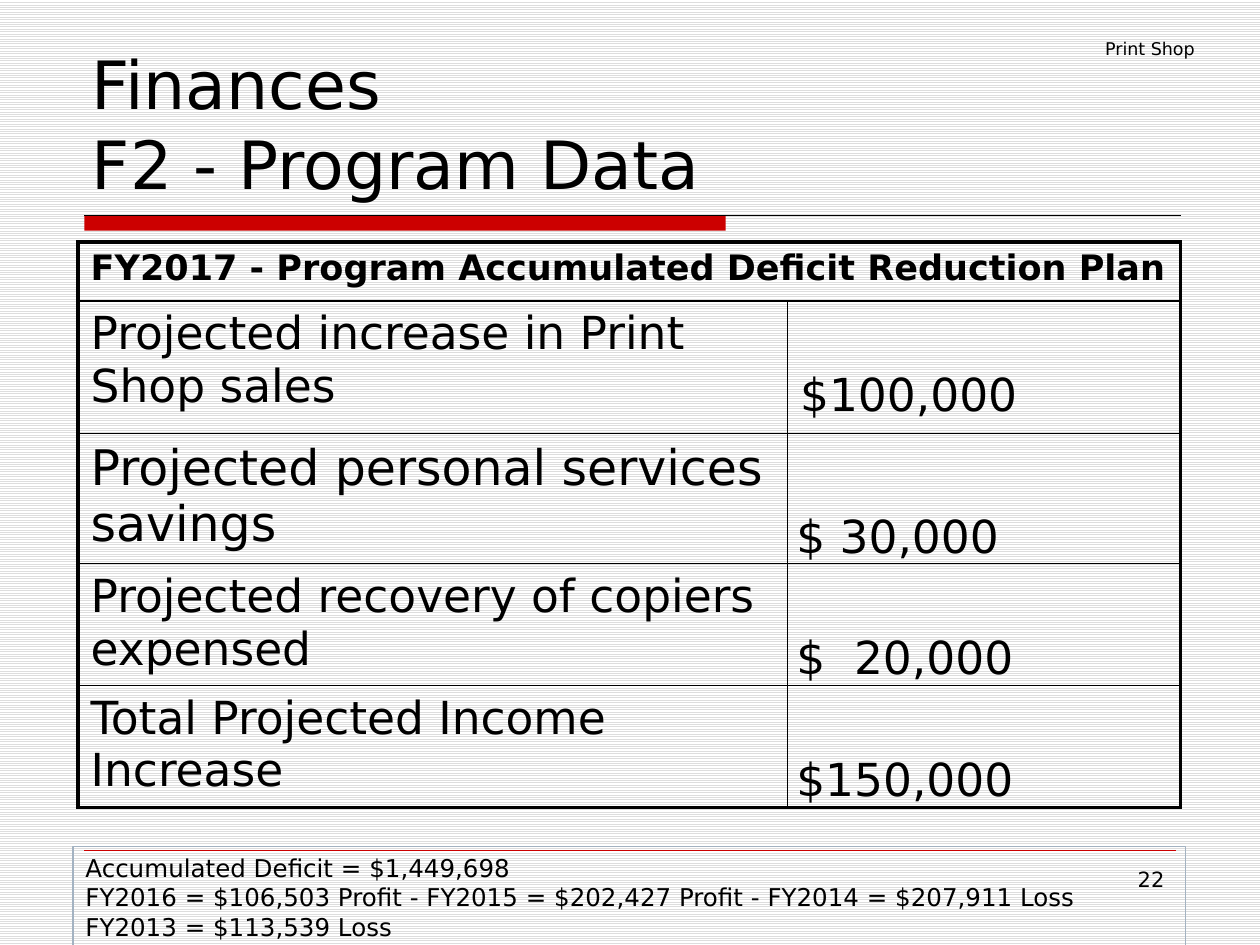
from lxml.etree import SubElement
from pptx import Presentation
from pptx.dml.color import RGBColor
from pptx.enum.dml import MSO_PATTERN
from pptx.enum.shapes import MSO_CONNECTOR, MSO_SHAPE
from pptx.enum.text import MSO_ANCHOR, PP_ALIGN
from pptx.oxml import parse_xml
from pptx.oxml.ns import nsdecls, qn
from pptx.util import Inches, Pt

BLACK = RGBColor(0x00, 0x00, 0x00)
WHITE = RGBColor(0xFF, 0xFF, 0xFF)
RED = RGBColor(0xCC, 0x00, 0x00)
STRIPE = RGBColor(0xDD, 0xDD, 0xDD)
FRAME = RGBColor(0xA3, 0xB2, 0xC1)
FONT = "DejaVu Sans"
THIN, THICK = 1, 2.25


def write(tf, lines, size, align=PP_ALIGN.LEFT, bold=False):
    """Fill a text frame with one paragraph per line."""
    tf.word_wrap = True
    for i, line in enumerate(lines):
        p = tf.add_paragraph() if i else tf.paragraphs[0]
        p.alignment = align
        r = p.add_run()
        r.text = line
        r.font.name, r.font.size, r.font.bold = FONT, Pt(size), bold
        r.font.color.rgb = BLACK


def set_borders(cell, **widths):
    """Draw black borders; widths are points keyed by L, R, T and B."""
    tc_pr = cell._tc.get_or_add_tcPr()
    for i, (side, width) in enumerate(widths.items()):
        tc_pr.insert(i, parse_xml(
            f'<a:ln{side} {nsdecls("a")} w="{Pt(width)}"><a:solidFill>'
            f'<a:srgbClr val="{BLACK}"/></a:solidFill></a:ln{side}>'))


prs = Presentation()
prs.slide_width, prs.slide_height = Inches(10), Inches(7.5)
s = prs.slides.add_slide(prs.slide_layouts[6])
bg = s.background.fill
bg.patterned()
bg.pattern = MSO_PATTERN.LIGHT_HORIZONTAL
bg.fore_color.rgb, bg.back_color.rgb = STRIPE, WHITE

# Title rule and footer rule
bar = s.shapes.add_shape(MSO_SHAPE.RECTANGLE, Inches(0.67), Inches(1.71),
                         Inches(5.09), Inches(0.12))
bar.shadow.inherit = False
bar.fill.solid()
bar.fill.fore_color.rgb = RED
bar.line.fill.background()
for right, y, color, width in ((9.37, 1.71, BLACK, 0.75), (9.33, 6.75, RED, 0.25)):
    rule = s.shapes.add_connector(MSO_CONNECTOR.STRAIGHT, Inches(0.67), Inches(y),
                                  Inches(right), Inches(y))
    rule.line.color.rgb, rule.line.width = color, Pt(width)
    SubElement(rule._element.spPr, qn("a:effectLst"))

# Title, page number and section name
title = s.shapes.add_textbox(Inches(0.63), Inches(0.33), Inches(8.75), Inches(1.33))
title.text_frame.vertical_anchor = MSO_ANCHOR.BOTTOM
write(title.text_frame, ["Finances", "F2 - Program Data"], 38)
for text, size, box in (("22", 12, (7.17, 6.83, 2.17, 0.52)),
                        ("Print Shop", 10, (7.33, 0.25, 2.25, 0.27))):
    label = s.shapes.add_textbox(*map(Inches, box))
    write(label.text_frame, [text], size, PP_ALIGN.RIGHT)

# Deficit reduction table
HEADER = "FY2017 - Program Accumulated Deficit Reduction Plan"
PLAN = [  # item, item size, amount, amount left and bottom margins
    ("Projected increase in Print Shop sales", 26, "$100,000", 0.1, 0.09),
    ("Projected personal services savings", 28, "$ 30,000", 0.07, 0),
    ("Projected recovery of copiers expensed", 26, "$  20,000", 0.07, 0),
    ("Total Projected Income Increase", 26, "$150,000", 0.07, 0),
]
heights = [0.47, 1.05, 1.0, 0.94, 0.94]
frame = s.shapes.add_table(len(heights), 2, Inches(0.62), Inches(1.92),
                           Inches(8.75), Inches(sum(heights)))
table = frame.table
table.first_row = table.horz_banding = False
table.columns[0].width, table.columns[1].width = Inches(5.63), Inches(3.12)
last = len(heights) - 1
for i, height in enumerate(heights):
    table.rows[i].height = Inches(height)
    for j in range(2):
        cell = table.cell(i, j)
        cell.fill.background()
        set_borders(cell, L=THIN if j and i else THICK,
                    R=THICK if j or not i else THIN,
                    T=THIN if i else THICK, B=THICK if i == last else THIN)
table.cell(0, 0).merge(table.cell(0, 1))
write(table.cell(0, 0).text_frame, [HEADER], 20, bold=True)
for i, (item, size, amount, left, bottom) in enumerate(PLAN, 1):
    write(table.cell(i, 0).text_frame, [item], size)
    cell = table.cell(i, 1)
    cell.vertical_anchor = MSO_ANCHOR.BOTTOM
    cell.margin_left, cell.margin_right = Inches(left), Inches(0.07)
    cell.margin_top, cell.margin_bottom = 0, Inches(bottom)
    write(cell.text_frame, [amount], 26)

# Accumulated deficit note
note = s.shapes.add_shape(MSO_SHAPE.RECTANGLE, Inches(0.58), Inches(6.72),
                          Inches(8.83), Inches(0.81))
note.shadow.inherit = False
note.fill.background()
note.line.color.rgb, note.line.width = FRAME, Pt(0.75)
note.text_frame.vertical_anchor = MSO_ANCHOR.TOP
write(note.text_frame, [
    "Accumulated Deficit = $1,449,698",
    "FY2016 = $106,503 Profit - FY2015 = $202,427 Profit - FY2014 = $207,911 Loss",
    "FY2013 = $113,539 Loss",
], 14)

prs.save("out.pptx")
